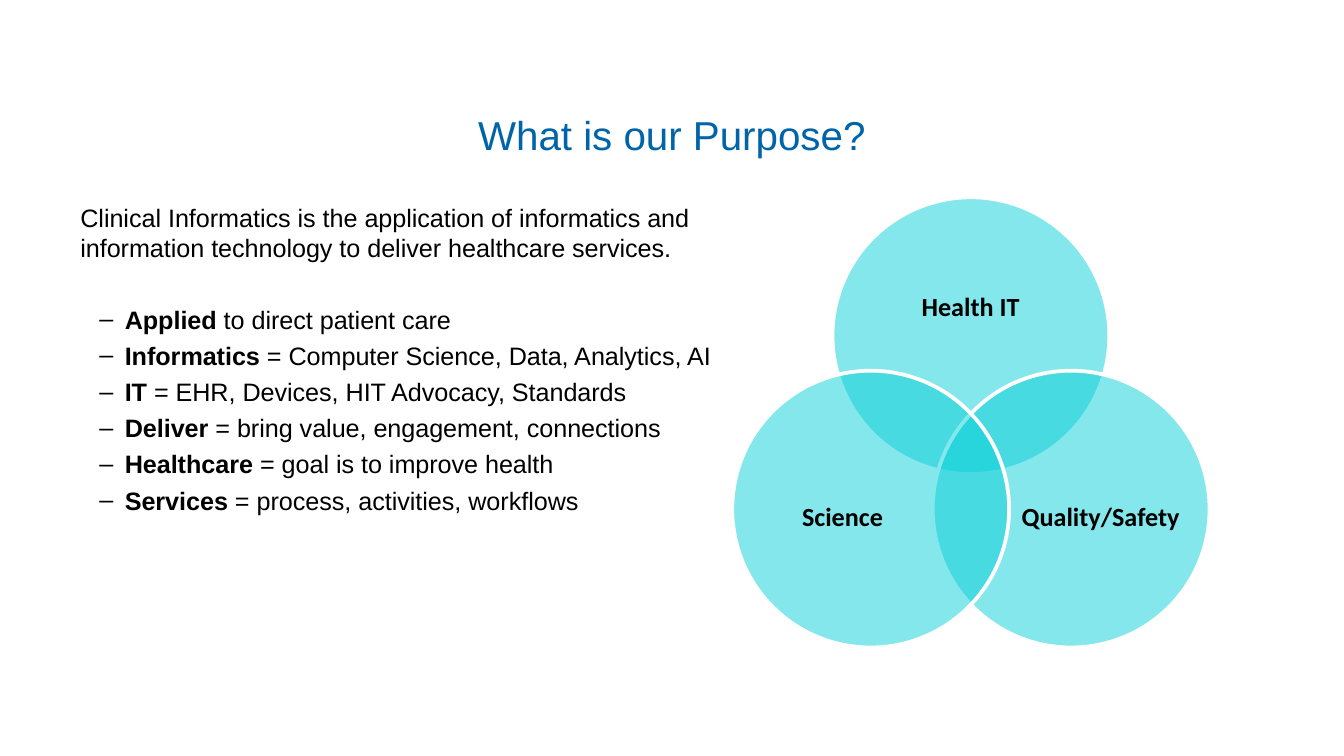
from lxml import etree
from pptx import Presentation
from pptx.dml.color import RGBColor
from pptx.enum.shapes import MSO_SHAPE as Preset
from pptx.enum.text import MSO_ANCHOR as Anchor, PP_ALIGN as Align
from pptx.oxml.ns import qn
from pptx.util import Cm, Pt

BLUE = RGBColor(0x00, 0x64, 0xA8)
TEAL = RGBColor(0x0B, 0xD0, 0xD9)
BLACK = RGBColor(0x00, 0x00, 0x00)
WHITE = RGBColor(0xFF, 0xFF, 0xFF)

TITLE_FONT = {"name": "Arial", "size": Pt(21.6)}
BODY_FONT = {"name": "Arial", "size": Pt(13.5)}
LABEL_FONT = {"name": "Calibri", "size": Pt(14), "bold": True}

INTRO = ("Clinical Informatics is the application of informatics and "
         "information technology to deliver healthcare services.")
TERMS = [
    ("Applied", " to direct patient care"),
    ("Informatics", " = Computer Science, Data, Analytics, AI"),
    ("IT", " = EHR, Devices, HIT Advocacy, Standards"),
    ("Deliver", " = bring value, engagement, connections"),
    ("Healthcare", " = goal is to improve health"),
    ("Services", " = process, activities, workflows"),
]


def apply_format(target, values):
    for attribute, value in values.items():
        setattr(target, attribute, value)


def add_run(paragraph, text, font, color=BLACK, **extra):
    run = paragraph.add_run()
    run.text = text
    apply_format(run.font, {**font, **extra})
    run.font.color.rgb = color


def add_frame(slide, box, **values):
    frame = slide.shapes.add_textbox(*map(Cm, box)).text_frame
    apply_format(frame, {"word_wrap": True, **values})
    return frame


def add_title(slide, box):
    frame = add_frame(slide, box, vertical_anchor=Anchor.MIDDLE)
    heading = frame.paragraphs[0]
    heading.alignment = Align.CENTER
    add_run(heading, "What is our Purpose?", TITLE_FONT, BLUE)


def add_dash(paragraph):
    properties = paragraph._p.get_or_add_pPr()
    properties.set("marL", str(Cm(0.84)))
    properties.set("indent", str(Cm(-0.48)))
    etree.SubElement(properties, qn("a:buFont")).set("typeface", "Arial")
    etree.SubElement(properties, qn("a:buChar")).set("char", "–")


def add_definition(slide, box):
    frame = add_frame(slide, box, margin_top=Cm(0.17))
    add_run(frame.paragraphs[0], INTRO, BODY_FONT)
    for index, (term, meaning) in enumerate(TERMS):
        entry = frame.add_paragraph()
        apply_format(entry, {"level": 1, "space_before": Pt(3.2 if index else 22)})
        add_dash(entry)
        add_run(entry, term, BODY_FONT, bold=True)
        add_run(entry, meaning, BODY_FONT, bold=False)


def add_circle(slide, left, top, diameter):
    circle = slide.shapes.add_shape(
        Preset.OVAL, Cm(left), Cm(top), Cm(diameter), Cm(diameter))
    circle.shadow.inherit = False
    circle.fill.solid()
    circle.fill.fore_color.rgb = TEAL
    color = circle.fill._xPr.find(qn("a:solidFill"))[0]
    etree.SubElement(color, qn("a:alpha")).set("val", "50000")
    circle.line.color.rgb = WHITE
    circle.line.width = Pt(2)


def add_label(slide, box, text):
    margins = dict.fromkeys(
        ("margin_left", "margin_top", "margin_right", "margin_bottom"), 0)
    frame = add_frame(slide, box, vertical_anchor=Anchor.MIDDLE, **margins)
    label = frame.paragraphs[0]
    apply_format(label, {"alignment": Align.CENTER, "line_spacing": 0.9})
    add_run(label, text, LABEL_FONT)


def add_venn(slide, box):
    left, top, width, height = box
    diameter = 0.58 * width
    far, low = width - diameter, height - diameter
    topics = [
        ("Health IT", far / 2, 0, (0.69, 0.91, 3.84, 2.36)),
        ("Quality/Safety", far, low, (1.6, 1.35, 3.15, 2.87)),
        ("Science", 0, low, (0.51, 1.35, 3.15, 2.87)),
    ]
    for topic, dx, dy, (inset_x, inset_y, label_width, label_height) in topics:
        x, y = left + dx, top + dy
        add_circle(slide, x, y, diameter)
        add_label(slide, (x + inset_x, y + inset_y, label_width, label_height), topic)


def main():
    deck = Presentation()
    apply_format(deck, {"slide_width": Cm(25.4), "slide_height": Cm(14.29)})
    slide = deck.slides.add_slide(deck.slide_layouts[6])
    add_title(slide, (2.12, 1.9, 21.16, 1.27))
    add_definition(slide, (1.27, 3.66, 12.55, 9.04))
    add_venn(slide, (13.84, 3.73, 9.02, 8.51))
    deck.save("out.pptx")


if __name__ == "__main__":
    main()
